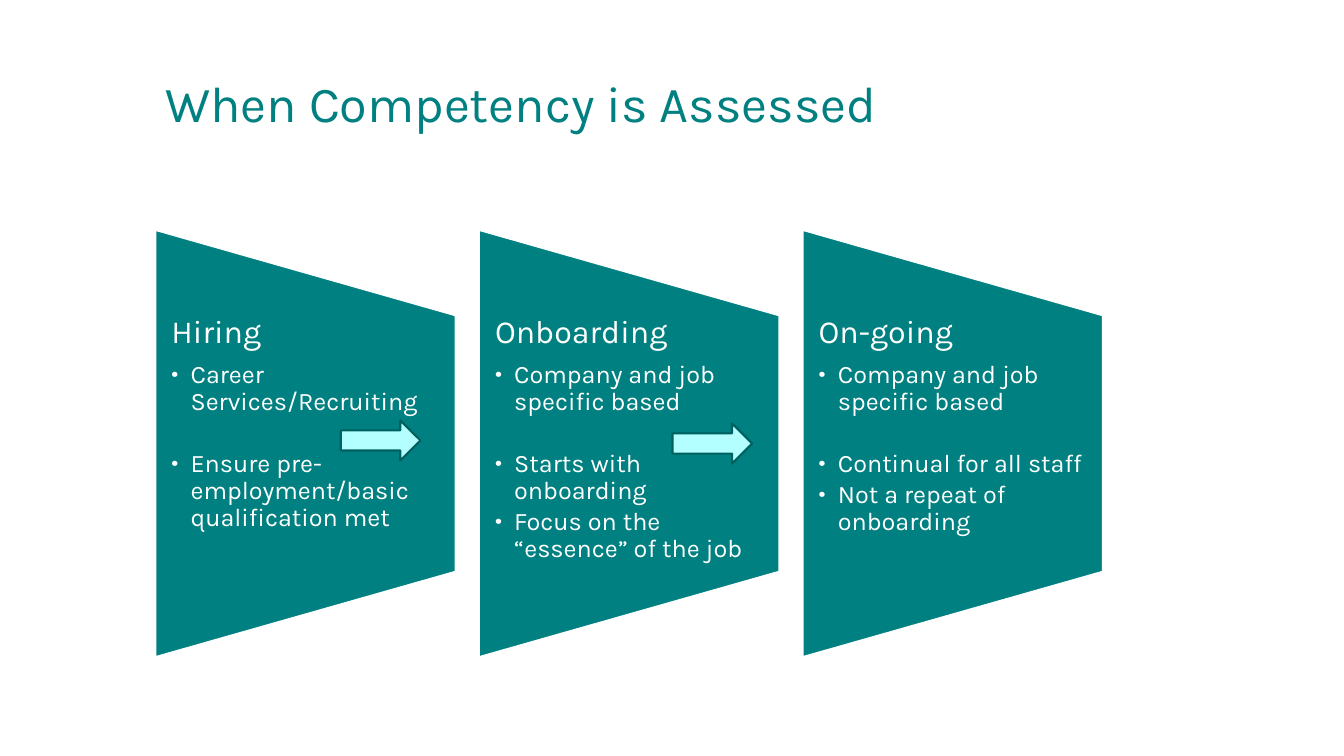
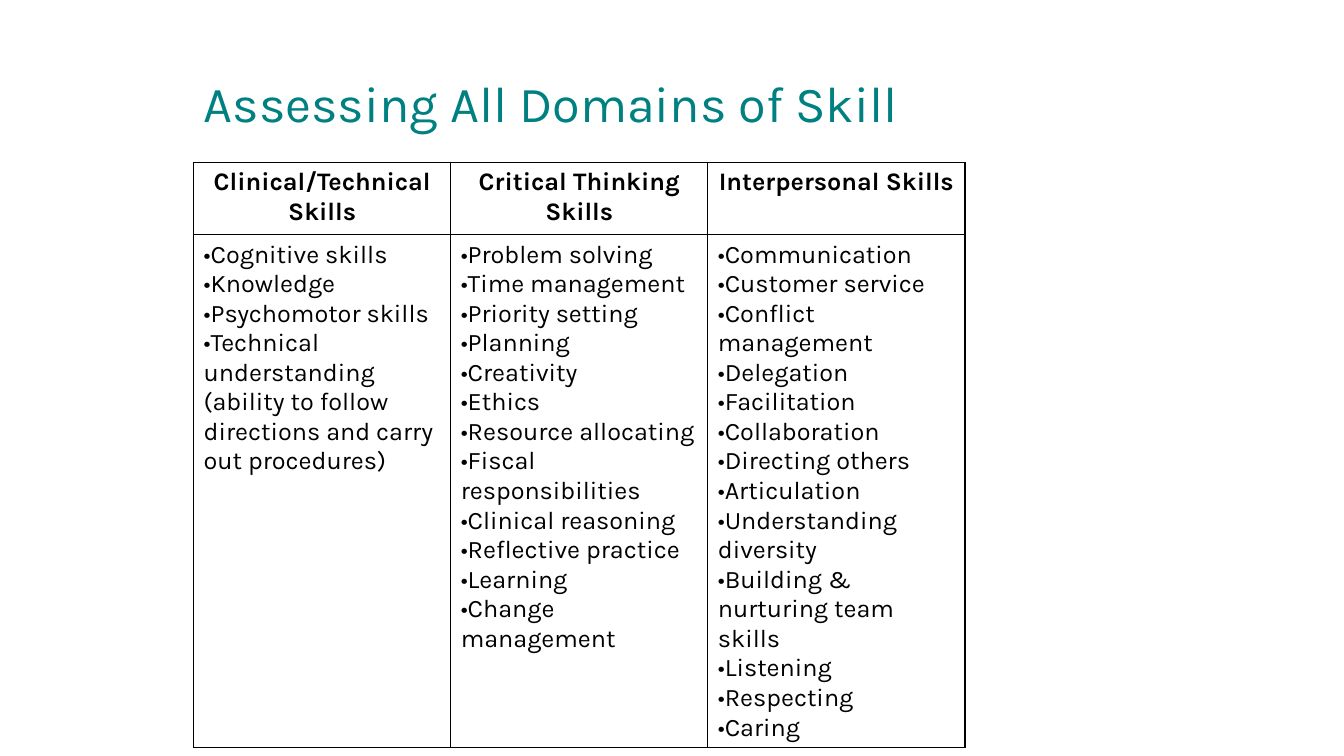
from lxml.etree import SubElement
from pptx import Presentation
from pptx.dml.color import RGBColor
from pptx.enum.shapes import MSO_SHAPE
from pptx.enum.text import MSO_ANCHOR, MSO_AUTO_SIZE, PP_ALIGN
from pptx.oxml.ns import qn
from pptx.util import Inches, Pt

FONT = "Karla"
TEAL, DARK_TEAL, PALE_CYAN = "008080", "005F5F", "B3FFFF"
WHITE, BLACK = "FFFFFF", "000000"

STAGE_LEFT, STAGE_TOP, STAGE_STEP = 1.54, 2.28, 3.21
STAGE_WIDTH, STAGE_HEIGHT = 2.98, 4.24
STAGES = [
    ("Hiring", ["Career Services/Recruiting",
                "Ensure pre-employment/basic qualification met"]),
    ("Onboarding", ["Company and job specific based",
                    "Starts with onboarding",
                    "Focus on the “essence” of the job"]),
    ("On-going", ["Company and job specific based",
                  "Continual for all staff",
                  "Not a repeat of onboarding"]),
]
STAGE_ARROWS = [(3.38, 4.17), (6.67, 4.2)]

DOMAINS_LEFT = 1.92
SKILL_DOMAINS = {
    "Clinical/Technical Skills": [
        "Cognitive skills", "Knowledge", "Psychomotor skills",
        "Technical understanding (ability to follow directions and carry out procedures)",
    ],
    "Critical Thinking Skills": [
        "Problem solving", "Time management", "Priority setting", "Planning",
        "Creativity", "Ethics", "Resource allocating", "Fiscal responsibilities",
        "Clinical reasoning", "Reflective practice", "Learning", "Change management",
    ],
    "Interpersonal Skills": [
        "Communication", "Customer service", "Conflict management", "Delegation",
        "Facilitation", "Collaboration", "Directing others", "Articulation",
        "Understanding diversity", "Building & nurturing team skills",
        "Listening", "Respecting", "Caring",
    ],
}


def color(hex_code):
    return RGBColor.from_string(hex_code)


def add_run(paragraph, text, size, hex_code, bold=False):
    run = paragraph.add_run()
    run.text = text
    font = run.font
    font.name, font.size, font.bold = FONT, Pt(size), bold
    font.color.rgb = color(hex_code)


def add_bullet(paragraph, indent=0):
    """Give the paragraph a bullet that hangs by indent inches."""
    properties = paragraph._p.get_or_add_pPr()
    properties.set("marL", str(Inches(indent)))
    properties.set("indent", str(-Inches(indent)))
    SubElement(properties, qn("a:buFont"), typeface=FONT)
    SubElement(properties, qn("a:buChar"), char="•")


def next_paragraph(frame, index):
    """Return the frame's own first paragraph, then new ones."""
    return frame.paragraphs[0] if index == 0 else frame.add_paragraph()


def add_titled_slide(deck, title_text, left, width):
    slide = deck.slides.add_slide(deck.slide_layouts.get_by_name("Title Only"))
    title = slide.shapes.title
    title.left, title.top = Inches(left), Inches(0.67)
    title.width, title.height = Inches(width), Inches(1.44)
    frame = title.text_frame
    frame.auto_size = MSO_AUTO_SIZE.NONE
    frame.vertical_anchor = MSO_ANCHOR.TOP
    frame.paragraphs[0].alignment = PP_ALIGN.LEFT
    add_run(frame.paragraphs[0], title_text, 36, TEAL)
    return slide


def add_filled_shape(shapes, preset, left, top, width, height, fill, line):
    shape = shapes.add_shape(preset, Inches(left), Inches(top), Inches(width), Inches(height))
    shape.shadow.inherit = False
    shape.fill.solid()
    shape.fill.fore_color.rgb = color(fill)
    shape.line.color.rgb = color(line)
    shape.line.width = Pt(1.5)
    return shape


def add_stage(slide, left, heading, points):
    """Add a panel tapering to the right, with a heading and bullets."""
    shapes = slide.shapes.add_group_shape().shapes
    # The preset is upright, so it is placed around its centre and then turned.
    turn_offset = (STAGE_HEIGHT - STAGE_WIDTH) / 2
    panel = add_filled_shape(shapes, MSO_SHAPE.FLOWCHART_MANUAL_OPERATION,
                             left - turn_offset, STAGE_TOP + turn_offset,
                             STAGE_HEIGHT, STAGE_WIDTH, TEAL, WHITE)
    panel.rotation = 270

    frame = shapes.add_textbox(Inches(left), Inches(3.13),
                               Inches(STAGE_WIDTH), Inches(2.55)).text_frame
    frame.word_wrap = True
    frame.margin_left = frame.margin_right = Inches(0.16)
    frame.margin_top = frame.margin_bottom = 0
    for index, text in enumerate([heading, *points]):
        paragraph = next_paragraph(frame, index)
        paragraph.line_spacing = 0.9
        # The first point stands apart from the points after it.
        paragraph.space_after = Pt({0: 8, 1: 24.6}.get(index, 2.6))
        if index > 0:
            add_bullet(paragraph, 0.19)
        add_run(paragraph, text, 18 if index else 23, WHITE)


def add_cell_borders(cell):
    properties = cell._tc.get_or_add_tcPr()
    for position, side in enumerate(("a:lnL", "a:lnR", "a:lnT", "a:lnB")):
        border = SubElement(properties, qn(side), w=str(Pt(1)))
        properties.insert(position, border)
        fill = SubElement(border, qn("a:solidFill"))
        SubElement(fill, qn("a:srgbClr"), val=BLACK)


def add_skill_table(slide, domains):
    table = slide.shapes.add_table(2, len(domains), Inches(DOMAINS_LEFT), Inches(1.61),
                                   Inches(7.65), Inches(5.72)).table
    table.first_row = table.horz_banding = False
    table.rows[0].height, table.rows[1].height = Inches(0.72), Inches(5)
    for column, (heading, skills) in enumerate(domains.items()):
        heading_cell, skills_cell = table.cell(0, column), table.cell(1, column)
        for cell in (heading_cell, skills_cell):
            cell.fill.background()
            add_cell_borders(cell)
        paragraph = heading_cell.text_frame.paragraphs[0]
        paragraph.alignment = PP_ALIGN.CENTER
        add_run(paragraph, heading, 18, BLACK, bold=True)
        for index, skill in enumerate(skills):
            paragraph = next_paragraph(skills_cell.text_frame, index)
            add_bullet(paragraph)
            add_run(paragraph, skill, 18, BLACK)


def build_assessment_stages(deck):
    slide = add_titled_slide(deck, "When Competency is Assessed", STAGE_LEFT, 8.6)
    for index, (heading, points) in enumerate(STAGES):
        add_stage(slide, STAGE_LEFT + index * STAGE_STEP, heading, points)
    for left, top in STAGE_ARROWS:
        add_filled_shape(slide.shapes, MSO_SHAPE.RIGHT_ARROW, left, top, 0.79, 0.4,
                         PALE_CYAN, DARK_TEAL)


def build_skill_domains(deck):
    slide = add_titled_slide(deck, "Assessing All Domains of Skill", DOMAINS_LEFT, 8.23)
    add_skill_table(slide, SKILL_DOMAINS)


def main():
    deck = Presentation()
    deck.slide_width, deck.slide_height = Inches(13.33), Inches(7.5)
    build_assessment_stages(deck)
    build_skill_domains(deck)
    deck.save("out.pptx")


if __name__ == "__main__":
    main()
